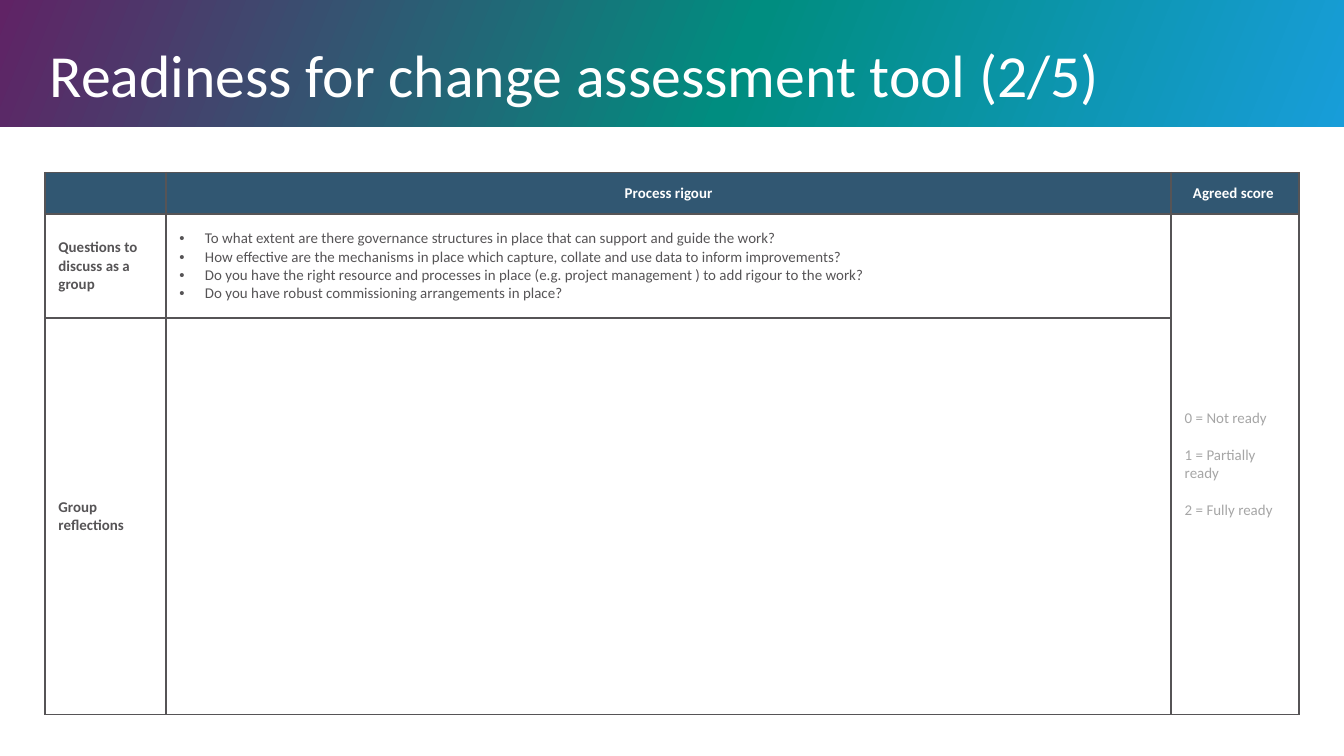
from dataclasses import dataclass

from lxml.etree import SubElement
from pptx import Presentation
from pptx.dml.color import RGBColor
from pptx.enum.shapes import MSO_SHAPE
from pptx.enum.text import MSO_ANCHOR, PP_ALIGN
from pptx.oxml import parse_xml
from pptx.oxml.ns import nsdecls, qn
from pptx.util import Inches, Pt

# Widescreen page, 16:9
WIDTH = Inches(10)
HEIGHT = WIDTH * 9 // 16
FONT = "Calibri"
TEXT_SIZE = 8
COLORS = {
    "white": "FFFFFF", "header": "315772", "ink": "565456", "hint": "A6A6A6",
    "purple": "602365", "green": "008D80", "blue": "189DD9",
}
BANNER_STOPS = [(0, "purple"), (55, "green"), (100, "blue")]
BANNER_ANGLE = 22

# Table grid: relative column widths and row heights
COLUMNS = (0.90, 7.48, 0.95)
ROWS = (0.31, 0.77, 2.95)


@dataclass(frozen=True)
class Box:
    """Left, top, width and height in percent of the slide."""
    left: float
    top: float
    width: float
    height: float

    def emu(self) -> tuple[int, ...]:
        return (int(WIDTH * self.left / 100), int(HEIGHT * self.top / 100),
                int(WIDTH * self.width / 100), int(HEIGHT * self.height / 100))


@dataclass(frozen=True)
class CellText:
    row: int
    col: int
    lines: tuple[str, ...] = ()
    color: str = "ink"
    bold: bool = False
    centered: bool = False
    bullets: bool = False
    gap: float = 0  # points between paragraphs


BANNER = Box(0, 0, 100, 16.75)
TITLE = Box(3.7, 6.15, 92.8, 7.3)
TABLE = Box(3.35, 22.83, 93.3, 71.7)

CELLS = [
    CellText(0, 0),
    CellText(0, 1, ("Process rigour",), "white", bold=True, centered=True),
    CellText(0, 2, ("Agreed score ",), "white", bold=True, centered=True),
    CellText(1, 0, ("Questions to discuss as a group",), bold=True),
    CellText(1, 1, (
        "To what extent are there governance structures in place that can support and guide the work?",
        "How effective are the mechanisms in place which capture, collate and use data to inform improvements?",
        "Do you have the right resource and processes in place (e.g. project management ) to add rigour to the work?",
        "Do you have robust commissioning arrangements in place?",
    ), bullets=True),
    CellText(1, 2, ("0 = Not ready", "1 = Partially ready", "2 = Fully ready"),
             "hint", gap=9.8),
    CellText(2, 0, ("Group reflections",), bold=True),
    CellText(2, 1),
]


def rgb(name: str) -> RGBColor:
    return RGBColor.from_string(COLORS[name])


def add_run(p, text: str, size: float, color: str, bold: bool = False) -> None:
    r = p.add_run()
    r.text = text
    r.font.name, r.font.size, r.font.bold = FONT, Pt(size), bold
    r.font.color.rgb = rgb(color)


def add_bullet(p) -> None:
    pPr = p._p.get_or_add_pPr()
    pPr.set("marL", str(Inches(0.19)))
    pPr.set("indent", str(-Inches(0.19)))
    SubElement(pPr, qn("a:buFont")).set("typeface", "Arial")
    SubElement(pPr, qn("a:buChar")).set("char", "•")


def add_banner(s, box: Box) -> None:
    sp = s.shapes.add_shape(MSO_SHAPE.RECTANGLE, *box.emu())
    sp.shadow.inherit = False
    sp.line.fill.background()
    stops = "".join(f'<a:gs pos="{pos * 1000}"><a:srgbClr val="{COLORS[name]}"/></a:gs>'
                    for pos, name in BANNER_STOPS)
    gradient = parse_xml(f'<a:gradFill {nsdecls("a")} rotWithShape="1"><a:gsLst>{stops}</a:gsLst>'
                         f'<a:lin ang="{BANNER_ANGLE * 60000}" scaled="0"/></a:gradFill>')
    sp._element.spPr.find(qn("a:prstGeom")).addnext(gradient)


def add_title(s, box: Box, text: str) -> None:
    tf = s.shapes.add_textbox(*box.emu()).text_frame
    tf.word_wrap = True
    tf.vertical_anchor = MSO_ANCHOR.MIDDLE
    tf.margin_left = tf.margin_right = tf.margin_top = tf.margin_bottom = 0
    add_run(tf.paragraphs[0], text, 32, "white")


def set_borders(cell) -> None:
    tcPr = cell._tc.get_or_add_tcPr()
    for i, side in enumerate(("lnL", "lnR", "lnT", "lnB")):
        tcPr.insert(i, parse_xml(
            f'<a:{side} {nsdecls("a")} w="{Pt(1)}"><a:solidFill>'
            f'<a:srgbClr val="{COLORS["ink"]}"/></a:solidFill></a:{side}>'))


def fill_cell(cell, content: CellText) -> None:
    cell.vertical_anchor = MSO_ANCHOR.MIDDLE
    tf = cell.text_frame
    if not content.lines:  # keeps an empty row from growing
        end = SubElement(tf.paragraphs[0]._p, qn("a:endParaRPr"))
        end.set("sz", str(TEXT_SIZE * 100))
    for i, line in enumerate(content.lines):
        p = tf.add_paragraph() if i else tf.paragraphs[0]
        p.alignment = PP_ALIGN.CENTER if content.centered else PP_ALIGN.LEFT
        if i and content.gap:
            p.space_before = Pt(content.gap)
        if content.bullets:
            add_bullet(p)
        add_run(p, line, TEXT_SIZE, content.color, content.bold)


def add_assessment_table(s, box: Box) -> None:
    left, top, width, height = box.emu()
    table = s.shapes.add_table(len(ROWS), len(COLUMNS), left, top, width, height).table
    table.first_row = table.horz_banding = False
    for column, share in zip(table.columns, COLUMNS):
        column.width = int(width * share / sum(COLUMNS))
    for row, share in zip(table.rows, ROWS):
        row.height = int(height * share / sum(ROWS))
    for i in range(len(ROWS)):
        for j in range(len(COLUMNS)):
            cell = table.cell(i, j)
            if i == 0:
                cell.fill.solid()
                cell.fill.fore_color.rgb = rgb("header")
            else:
                cell.fill.background()
            set_borders(cell)
    # The score key spans both body rows
    table.cell(1, 2).merge(table.cell(2, 2))
    for content in CELLS:
        fill_cell(table.cell(content.row, content.col), content)


def main() -> None:
    prs = Presentation()
    prs.slide_width, prs.slide_height = WIDTH, HEIGHT
    s = prs.slides.add_slide(prs.slide_layouts[6])
    add_banner(s, BANNER)
    add_assessment_table(s, TABLE)
    add_title(s, TITLE, "Readiness for change assessment tool (2/5)")
    prs.save("out.pptx")


if __name__ == "__main__":
    main()
